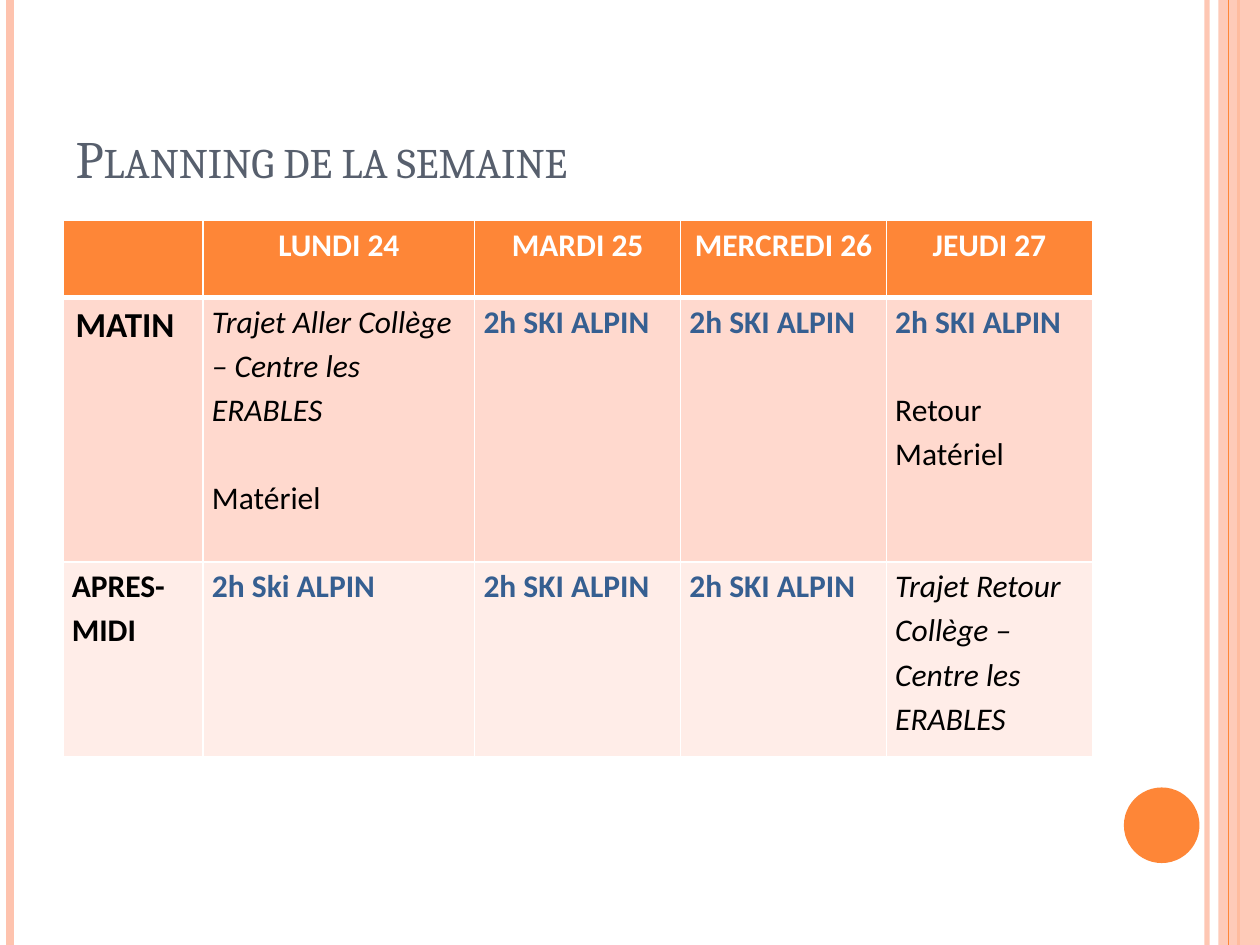
import pptx
import pptx.dml.color
import pptx.enum.shapes
import pptx.enum.text
import pptx.oxml
import pptx.oxml.ns
import pptx.util

Inches = pptx.util.Inches
Pt = pptx.util.Pt
ALIGN = pptx.enum.text.PP_ALIGN
ANCHOR = pptx.enum.text.MSO_ANCHOR
SHAPE = pptx.enum.shapes.MSO_SHAPE

ORANGE = "FE8637"
PEACH = "FEC3AE"
WHITE = "FFFFFF"
BLUE = "365F91"

SKI = [("2h SKI ALPIN", dict(color=BLUE, bold=True))]
HEADINGS = ["LUNDI 24", "MARDI 25", "MERCREDI 26", "JEUDI 27"]
HEADER = [[]] + [
    [(day, dict(color=WHITE, bold=True, align=ALIGN.CENTER))] for day in HEADINGS
]
MORNING = [
    [("MATIN", dict(size=20, bold=True, spacing=1))],
    [
        ("Trajet Aller Collège – Centre les ERABLES", dict(italic=True)),
        ("Matériel", dict(before=25)),
    ],
    SKI,
    SKI,
    SKI + [("Retour Matériel", dict(before=25))],
]
AFTERNOON = [
    [("APRES-MIDI", dict(bold=True))],
    [("2h Ski ALPIN", dict(color=BLUE, bold=True))],
    SKI,
    SKI,
    [("Trajet Retour Collège – Centre les ERABLES", dict(italic=True))],
]
ROWS = [
    (HEADER, ORANGE, 0.61),
    (MORNING, "FFD9CE", 2.1),
    (AFTERNOON, "FFEDE8", 1.55),
]
COLUMNS = [1.11, 2.15, 1.63, 1.63, 1.63]


def rgb(value):
    return pptx.dml.color.RGBColor.from_string(value)


def write(p, text, size=18, font="Calibri", color="000000", bold=False, italic=False,
          align=ALIGN.LEFT, spacing=1.15, before=0, small_caps=False):
    p.alignment = align
    p.line_spacing = spacing
    p.space_before = Pt(before)
    r = p.add_run()
    r.text = text
    r.font.size = Pt(size)
    r.font.name = font
    r.font.bold = bold
    r.font.italic = italic
    r.font.color.rgb = rgb(color)
    if small_caps:
        r._r.get_or_add_rPr().set("cap", "small")


def set_alpha(color_parent, percent):
    color = color_parent.find(".//" + pptx.oxml.ns.qn("a:srgbClr"))
    alpha = pptx.oxml.parse_xml(
        f'<a:alpha {pptx.oxml.ns.nsdecls("a")} val="{percent * 1000}"/>'
    )
    color.append(alpha)


def add_rule(s, x, top, height, color, width):
    line = s.shapes.add_connector(
        pptx.enum.shapes.MSO_CONNECTOR.STRAIGHT,
        Inches(x), Inches(top), Inches(x), Inches(top + height),
    )
    line.line.color.rgb = rgb(color)
    line.line.width = Pt(width)
    effects = pptx.oxml.parse_xml(f'<a:effectLst {pptx.oxml.ns.nsdecls("a")}/>')
    line._element.spPr.append(effects)
    return line


def add_solid(s, kind, left, top, width, height, color):
    sp = s.shapes.add_shape(
        kind, Inches(left), Inches(top), Inches(width), Inches(height)
    )
    sp.shadow.inherit = False
    sp.fill.solid()
    sp.fill.fore_color.rgb = rgb(color)
    sp.line.fill.background()
    return sp


def add_decoration(s, left, top, width, height):
    right = left + width
    inner = add_rule(s, right - 0.42, top, height, PEACH, 3)
    set_alpha(inner._element.spPr, 93)
    add_rule(s, left + 0.08, top, height, PEACH, 4.5)
    add_rule(s, right - 0.17, top, height, ORANGE, 1.5)
    band = add_solid(s, SHAPE.RECTANGLE, right - 0.33, top, 0.33, height, PEACH)
    set_alpha(band._element.spPr, 87)
    add_rule(s, right - 0.25, top, height, ORANGE, 0.75)
    add_solid(s, SHAPE.OVAL, right - 1.08, top + height - 1.25, 0.6, 0.6, ORANGE)


def add_title(s, left, top, width, height):
    title = s.shapes.title
    title.left, title.top = Inches(left), Inches(top)
    title.width, title.height = Inches(width), Inches(height)
    tf = title.text_frame
    tf.word_wrap = True
    tf.vertical_anchor = ANCHOR.BOTTOM
    write(tf.paragraphs[0], "Planning de la semaine", size=30, font="Cambria",
          color="575F6D", spacing=1, small_caps=True)


def set_borders(cell, widths):
    tcPr = cell._tc.get_or_add_tcPr()
    for side, width in widths.items():
        tcPr.append(pptx.oxml.parse_xml(
            f'<a:ln{side} {pptx.oxml.ns.nsdecls("a")} w="{Pt(width)}">'
            f'<a:solidFill><a:srgbClr val="{WHITE}"/></a:solidFill></a:ln{side}>'
        ))


def fill_cell(cell, paragraphs, color, top_border, bottom_border, tight):
    set_borders(cell, dict(L=1, R=1, T=top_border, B=bottom_border))
    cell.fill.solid()
    cell.fill.fore_color.rgb = rgb(color)
    cell.vertical_anchor = ANCHOR.TOP
    if tight:
        cell.margin_left = cell.margin_right = Inches(0.07)
        cell.margin_top = cell.margin_bottom = 0
    tf = cell.text_frame
    for i, (text, style) in enumerate(paragraphs):
        p = tf.paragraphs[0] if i == 0 else tf.add_paragraph()
        write(p, text, **style)


def add_schedule(s, left, top, width, height):
    table = s.shapes.add_table(
        len(ROWS), len(COLUMNS),
        Inches(left), Inches(top), Inches(width), Inches(height),
    ).table
    for column, share in zip(table.columns, COLUMNS):
        column.width = Inches(width * share / sum(COLUMNS))
    for i, (cells, color, row_height) in enumerate(ROWS):
        table.rows[i].height = Inches(height * row_height / sum(row[2] for row in ROWS))
        for j, paragraphs in enumerate(cells):
            fill_cell(table.cell(i, j), paragraphs, color,
                      top_border=3 if i == 1 else 1,
                      bottom_border=3 if i == 0 else 1,
                      tight=(i, j) != (1, 0))


def main():
    prs = pptx.Presentation()
    prs.slide_width, prs.slide_height = Inches(10), Inches(7.5)
    s = prs.slides.add_slide(prs.slide_layouts[5])
    s.background.fill.solid()
    s.background.fill.fore_color.rgb = rgb(WHITE)
    add_decoration(s, 0, 0, 10, 7.5)
    add_title(s, 0.5, 0.3, 8.17, 1.25)
    add_schedule(s, 0.5, 1.75, 8.17, 4.26)
    prs.save("out.pptx")


if __name__ == "__main__":
    main()
